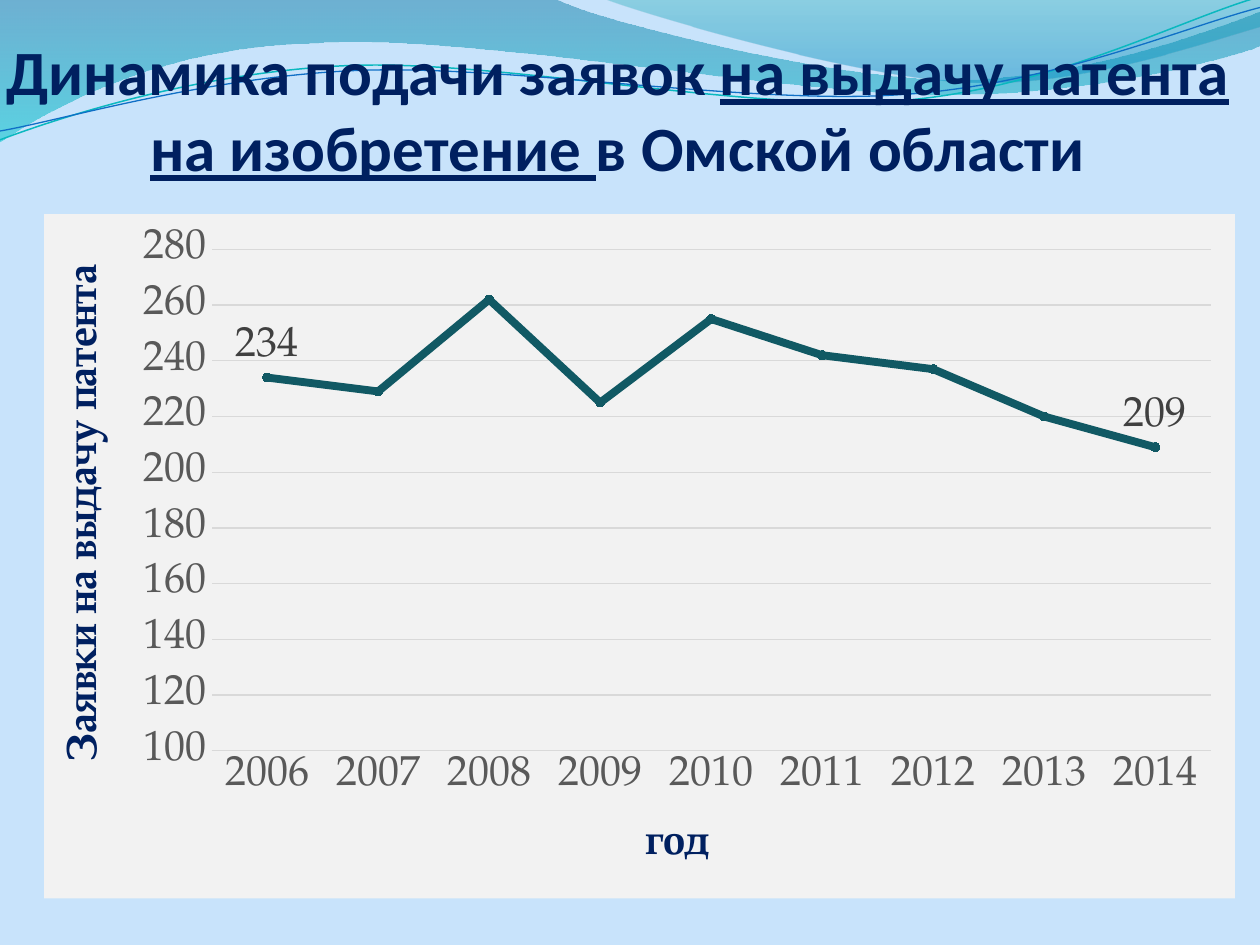
from dataclasses import dataclass
from math import cos, radians, sin

from lxml.etree import SubElement as Sub
from pptx import Presentation
from pptx.chart.data import CategoryChartData as Data
from pptx.dml.color import RGBColor as RGB
from pptx.enum.chart import XL_CHART_TYPE as Kind, XL_LABEL_POSITION as Pos
from pptx.enum.chart import XL_MARKER_STYLE as Mark, XL_TICK_MARK as Tick
from pptx.enum.text import MSO_ANCHOR as Anchor, MSO_AUTO_SIZE as Auto, PP_ALIGN as Align
from pptx.oxml import parse_xml
from pptx.oxml.ns import nsdecls, qn
from pptx.util import Inches, Pt


@dataclass
class Theme:
    back: str = "C8E3FB"
    navy: str = "002060"
    teal: str = "115964"
    dot: str = "0D0D0D"
    panel: str = "F2F2F2"
    grid: str = "D9D9D9"
    tick: str = "595959"
    label: str = "404040"
    head: str = "Calibri"
    body: str = "TeX Gyre Pagella"
    big: int = 36
    text: int = 24


def pairs(seg):
    return list(zip(seg[::2], seg[1::2]))


def turn(path, hub, angle):
    """Turn a path clockwise about a hub."""
    c, s = cos(radians(angle)), sin(radians(angle))
    out = []
    for seg in path:
        rel = [(x - hub[0], y - hub[1]) for x, y in pairs(seg)]
        out.append([n for x, y in rel
                    for n in (hub[0] + x * c - y * s, hub[1] + x * s + y * c)])
    return out


class Deck:
    def __init__(self, theme):
        self.theme = theme
        self.prs = Presentation()
        self.prs.slide_width, self.prs.slide_height = Inches(10), Inches(7.5)
        self.slide = self.prs.slides.add_slide(self.prs.slide_layouts[5])
        self.paint(self.slide.background.fill, theme.back)

    def paint(self, fill, color):
        fill.solid()
        fill.fore_color.rgb = RGB.from_string(color)

    def font(self, font, color, size=None, name=None, bold=False):
        font.name, font.size = name or self.theme.body, Pt(size or self.theme.text)
        font.color.rgb, font.bold = RGB.from_string(color), bold

    def line(self, line, color, width):
        line.color.rgb, line.width = RGB.from_string(color), Pt(width)

    def free(self, path, close):
        """Segments of 2 numbers are corners, those of 6 are Bezier curves."""
        pts = [(Inches(x), Inches(y)) for seg in path for x, y in pairs(seg)]
        pen = self.slide.shapes.build_freeform(*pts[0], scale=1.0)
        pen.add_line_segments(pts[1:], close=close)
        shape = pen.convert_to_shape()
        shape.shadow.inherit = False
        steps = iter(list(shape._element.iter(qn("a:lnTo"))))
        for seg in path[1:]:
            first, *rest = [next(steps) for _ in pairs(seg)]
            if rest:
                first.tag = qn("a:cubicBezTo")
            for node in rest:
                first.append(node[0])
                node.getparent().remove(node)
        return shape

    def wave(self, path, stops):
        shape = self.free(path, True)
        shape.line.fill.background()
        shape.fill.gradient()
        shape.fill.gradient_angle = 270
        for stop, (pos, color, _) in zip(shape.fill.gradient_stops, stops):
            stop.position, stop.color.rgb = pos, RGB.from_string(color)
        for node, (_, _, alpha) in zip(shape._element.iter(qn("a:srgbClr")), stops):
            Sub(node, qn("a:alpha")).set("val", str(alpha * 1000))

    def curve(self, path, hub, color, width, tilt=2.7):
        shape = self.free(turn(path, hub, tilt), False)
        shape.rotation = 360 - tilt
        shape.fill.background()
        self.line(shape.line, color, width)

    def title(self, box, runs):
        shape = self.slide.shapes.title
        shape.left, shape.top, shape.width, shape.height = map(Inches, box)
        self.slide.shapes._spTree.append(shape._element)  # in front of the waves
        frame = shape.text_frame
        frame.auto_size, frame.word_wrap = Auto.NONE, True
        frame.vertical_anchor = Anchor.BOTTOM
        frame.margin_left = frame.margin_right = frame.margin_bottom = 0
        frame.margin_top = Inches(0.05)
        para = frame.paragraphs[0]
        para.alignment = Align.CENTER
        for text, under in runs:
            run = para.add_run()
            run.text = text
            self.font(run.font, self.theme.navy, self.theme.big, self.theme.head, True)
            run.font.underline = under

    def axis(self, axis, text):
        axis.major_tick_mark = axis.minor_tick_mark = Tick.NONE
        self.font(axis.tick_labels.font, self.theme.tick)
        frame = axis.axis_title.text_frame
        run = frame.paragraphs[0].add_run()
        run.text = text
        self.font(run.font, self.theme.navy, bold=True)
        return frame

    def area(self, chart, box, inner):
        """Fix the plot area, given in inches within the chart."""
        plot = next(chart._chartSpace.iter(qn("c:plotArea")))
        lay = plot.find(qn("c:layout"))
        if lay is None:
            lay = Sub(plot, qn("c:layout"))
            plot.insert(0, lay)
        man = Sub(lay, qn("c:manualLayout"))
        shares = [n / whole for n, whole in zip(inner, box[2:] * 2)]
        vals = ["inner", "edge", "edge", *shares]
        for key, val in zip(("layoutTarget", "xMode", "yMode", "x", "y", "w", "h"), vals):
            Sub(man, qn(f"c:{key}")).set("val", str(val))

    def chart(self, box, inner, cats, vals):
        t = self.theme
        data = Data()
        data.categories = cats
        data.add_series("Series 1", vals)
        chart = self.slide.shapes.add_chart(
            Kind.LINE_MARKERS_STACKED, *map(Inches, box), data).chart
        chart.has_legend = chart.has_title = False
        self.font(chart.font, "000000")
        chart._chartSpace.find(qn("c:chart")).addnext(parse_xml(
            f'<c:spPr {nsdecls("c", "a")}><a:solidFill><a:srgbClr val="{t.panel}"/>'
            '</a:solidFill><a:ln><a:noFill/></a:ln></c:spPr>'))
        self.area(chart, box, inner)

        # Axes
        cat, val = chart.category_axis, chart.value_axis
        self.axis(cat, "год")
        self.line(cat.format.line, t.grid, 0.75)
        frame = self.axis(val, "Заявки на выдачу патента")
        frame._txBody.bodyPr.set("rot", "-5400000")
        val.minimum_scale, val.maximum_scale, val.major_unit = 100, 280, 20
        val.format.line.fill.background()
        self.line(val.major_gridlines.format.line, t.grid, 0.75)

        # Line and markers
        plot = chart.plots[0]
        plot.vary_by_categories = False
        row = plot.series[0]
        row.smooth = False
        self.line(row.format.line, t.teal, 4.5)
        row.marker.style, row.marker.size = Mark.CIRCLE, 5
        self.paint(row.marker.format.fill, t.dot)
        row.marker.format.line.fill.background()

        # Labels on the first and last points only
        labels = row.data_labels
        labels.show_value, labels.position = True, Pos.ABOVE
        self.font(labels.font, t.label)
        for i in range(1, len(vals) - 1):
            labels._element.insert(i - 1, parse_xml(
                f'<c:dLbl {nsdecls("c")}><c:idx val="{i}"/><c:delete val="1"/></c:dLbl>'))


def main():
    deck = Deck(Theme())

    # Waves along the top
    deck.wave([(0, 0), (4.4, -0.01), (4.76, 0.17, 6.64, 0.63, 7.58, 0.63),
               (8.53, 0.63, 9.58, 0.26, 10, 0.09), (10.01, 0.36),
               (9.83, 0.44, 8.7, 0.76, 7.46, 0.75), (6.22, 0.75, 3.82, 0.28, 2.57, 0.34),
               (1.29, 0.36, 0.46, 0.83, -0.01, 1.13)],
              [(0, "0074A1", 45), (1, "00C6CF", 55)])
    deck.wave([(4.79, -0.01), (5.09, 0.11, 6.82, 0.62, 7.69, 0.65),
               (8.56, 0.69, 9.61, 0.32, 10, 0.21), (10, 0)],
              [(0, "00A1A9", 30), (0.8, "008BBF", 45)])
    deck.curve([(0, 1.11), (0.48, 0.93, 1.58, 0.57, 2.77, 0.52),
                (3.95, 0.47, 5.93, 0.89, 7.13, 0.8), (8.33, 0.71, 9.38, 0.15, 9.98, -0.02)],
               (4.99, 0.57), "0AB8BF", 0.85)
    deck.curve([(0, 1.04), (0.47, 0.96, 1.64, 0.61, 2.83, 0.56),
                (4.03, 0.51, 5.97, 0.84, 7.17, 0.75), (8.36, 0.67, 9.41, 0.21, 10, 0.06)],
               (5, 0.59), "0F6FC6", 0.75)

    # Title and chart
    deck.title((0, 0.21, 9.8, 1.25), [
        ("Динамика подачи заявок ", False),
        ("на выдачу патента на изобретение ", True),
        ("в Омской области", False)])
    deck.chart((0.35, 1.7, 9.45, 5.43), (1.33, 0.28, 7.93, 3.98),
               [str(y) for y in range(2006, 2015)],
               [234, 229, 262, 225, 255, 242, 237, 220, 209])
    deck.prs.save("out.pptx")


if __name__ == "__main__":
    main()
